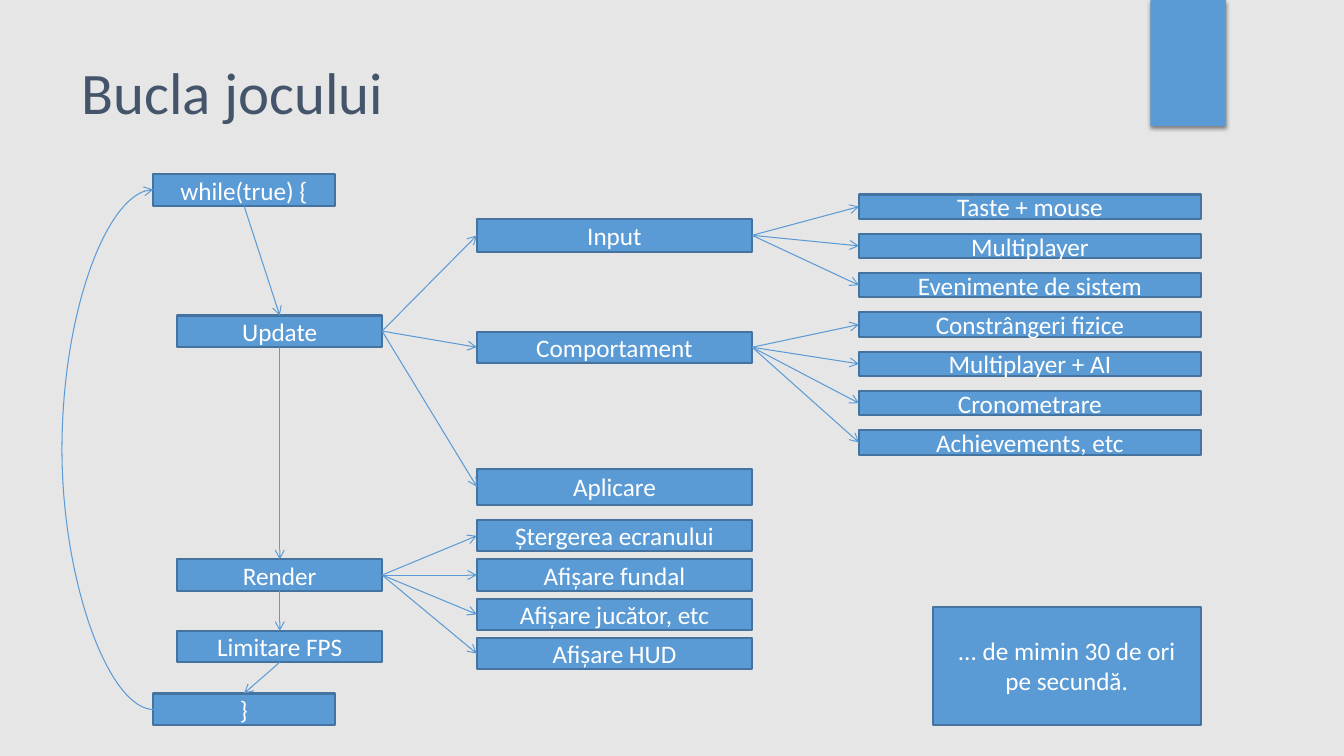
from lxml.etree import SubElement
from pptx import Presentation
from pptx.dml.color import RGBColor
from pptx.enum.shapes import MSO_CONNECTOR, MSO_SHAPE
from pptx.enum.text import MSO_ANCHOR, PP_ALIGN
from pptx.oxml import parse_xml
from pptx.oxml.ns import nsdecls, qn
from pptx.util import Inches, Pt

BLUE = RGBColor(0x5B, 0x9B, 0xD5)
OUTLINE = RGBColor(0x43, 0x73, 0x9E)
SLATE = RGBColor(0x44, 0x54, 0x6A)
GREY = RGBColor(0xE7, 0xE6, 0xE6)
WHITE = RGBColor(0xFF, 0xFF, 0xFF)
FONT = "Calibri"

LOOP_COLUMN = (1.52, 1.8)
STAGE_COLUMN = (1.76, 2.03)
STEP_COLUMN = (4.73, 2.73)
DETAIL_COLUMN = (8.52, 3.39)
NOTE_COLUMN = (9.25, 2.66)
ROW = 0.39
BOX_HEIGHT = 0.31
DETAIL_HEIGHT = 0.24
TOP, LEFT, BOTTOM, RIGHT = range(4)

presentation = Presentation()
presentation.slide_width = Inches(13.33)
presentation.slide_height = Inches(7.5)
slide = presentation.slides.add_slide(presentation.slide_layouts[5])
slide.background.fill.solid()
slide.background.fill.fore_color.rgb = GREY


def add_box(column, top, height, label):
    left, width = column
    box = slide.shapes.add_shape(
        MSO_SHAPE.FLOWCHART_PROCESS,
        Inches(left), Inches(top), Inches(width), Inches(height))
    box.shadow.inherit = False
    box.fill.solid()
    box.fill.fore_color.rgb = BLUE
    box.line.color.rgb = OUTLINE
    box.line.width = Pt(1.5)
    box.text_frame.word_wrap = True
    box.text_frame.vertical_anchor = MSO_ANCHOR.MIDDLE
    paragraph = box.text_frame.paragraphs[0]
    paragraph.alignment = PP_ALIGN.CENTER
    run = paragraph.add_run()
    run.text = label
    run.font.name = FONT
    run.font.size = Pt(18)
    run.font.color.rgb = WHITE
    return box


def add_arrow(kind, start=(0, 0), end=(0, 0)):
    arrow = slide.shapes.add_connector(
        kind, *(Inches(length) for length in (*start, *end)))
    arrow.line.color.rgb = BLUE
    arrow.line.width = Pt(0.75)
    SubElement(arrow.line._get_or_add_ln(), qn("a:tailEnd"), type="arrow")
    SubElement(arrow._element.spPr, qn("a:effectLst"))
    return arrow


tab = slide.shapes.add_shape(
    MSO_SHAPE.RECTANGLE, Inches(11.41), 0, Inches(0.75), Inches(1.25))
tab.fill.solid()
tab.fill.fore_color.rgb = BLUE
tab.line.fill.background()
tab._element.spPr.append(parse_xml(
    f'<a:effectLst {nsdecls("a")}>'
    f'<a:outerShdw blurRad="{Pt(3)}" dist="{Pt(2)}" dir="5400000" rotWithShape="0">'
    '<a:srgbClr val="000000"><a:alpha val="45000"/></a:srgbClr>'
    '</a:outerShdw></a:effectLst>'))

title = slide.shapes.title
title.left, title.top = Inches(0.71), Inches(0.5)
title.width, title.height = Inches(10.29), Inches(1.53)
title.text_frame.vertical_anchor = MSO_ANCHOR.TOP
heading = title.text_frame.paragraphs[0]
heading.alignment = PP_ALIGN.LEFT
heading_run = heading.add_run()
heading_run.text = "Bucla jocului"
heading_run.font.name = FONT
heading_run.font.size = Pt(42)
heading_run.font.color.rgb = SLATE

loop_start = add_box(LOOP_COLUMN, 1.73, BOX_HEIGHT, "while(true) {")
update = add_box(STAGE_COLUMN, 3.13, BOX_HEIGHT, "Update")
render = add_box(STAGE_COLUMN, 5.55, BOX_HEIGHT, "Render")
limit = add_box(STAGE_COLUMN, 6.26, BOX_HEIGHT, "Limitare FPS")
loop_end = add_box(LOOP_COLUMN, 6.88, BOX_HEIGHT, "}")

player_input = add_box(STEP_COLUMN, 2.17, 0.33, "Input")
behaviour = add_box(STEP_COLUMN, 3.29, BOX_HEIGHT, "Comportament")
applying = add_box(STEP_COLUMN, 4.65, 0.36, "Aplicare")

drawing_steps = [
    add_box(STEP_COLUMN, 5.16 + ROW * row, BOX_HEIGHT, label)
    for row, label in enumerate([
        "Ștergerea ecranului", "Afișare fundal",
        "Afișare jucător, etc", "Afișare HUD"])]
details = [
    add_box(DETAIL_COLUMN, 1.93 + ROW * row, DETAIL_HEIGHT, label)
    for row, label in enumerate([
        "Taste + mouse", "Multiplayer", "Evenimente de sistem",
        "Constrângeri fizice", "Multiplayer + AI",
        "Cronometrare", "Achievements, etc"])]
add_box(NOTE_COLUMN, 6.02, 1.17, "... de mimin 30 de ori pe secundă.")

stages = [loop_start, update, render, limit, loop_end]
links = [(source, BOTTOM, target, TOP) for source, target in zip(stages, stages[1:])]
for source, targets in [
        (update, [player_input, behaviour, applying]),
        (player_input, details[:3]),
        (behaviour, details[3:]),
        (render, drawing_steps)]:
    links += [(source, RIGHT, target, LEFT) for target in targets]

for source, source_side, target, target_side in links:
    arrow = add_arrow(MSO_CONNECTOR.STRAIGHT)
    arrow.begin_connect(source, source_side)
    arrow.end_connect(target, target_side)

repeat = add_arrow(MSO_CONNECTOR.CURVE, (1.52, 1.88), (1.53, 7.04))
repeat._element.spPr.find(qn("a:xfrm")).set("rot", "10800000")
bend = repeat._element.spPr.find(qn("a:prstGeom")).get_or_add_avLst()
SubElement(bend, qn("a:gd"), name="adj1", fmla="val 9300000")

presentation.save("out.pptx")
